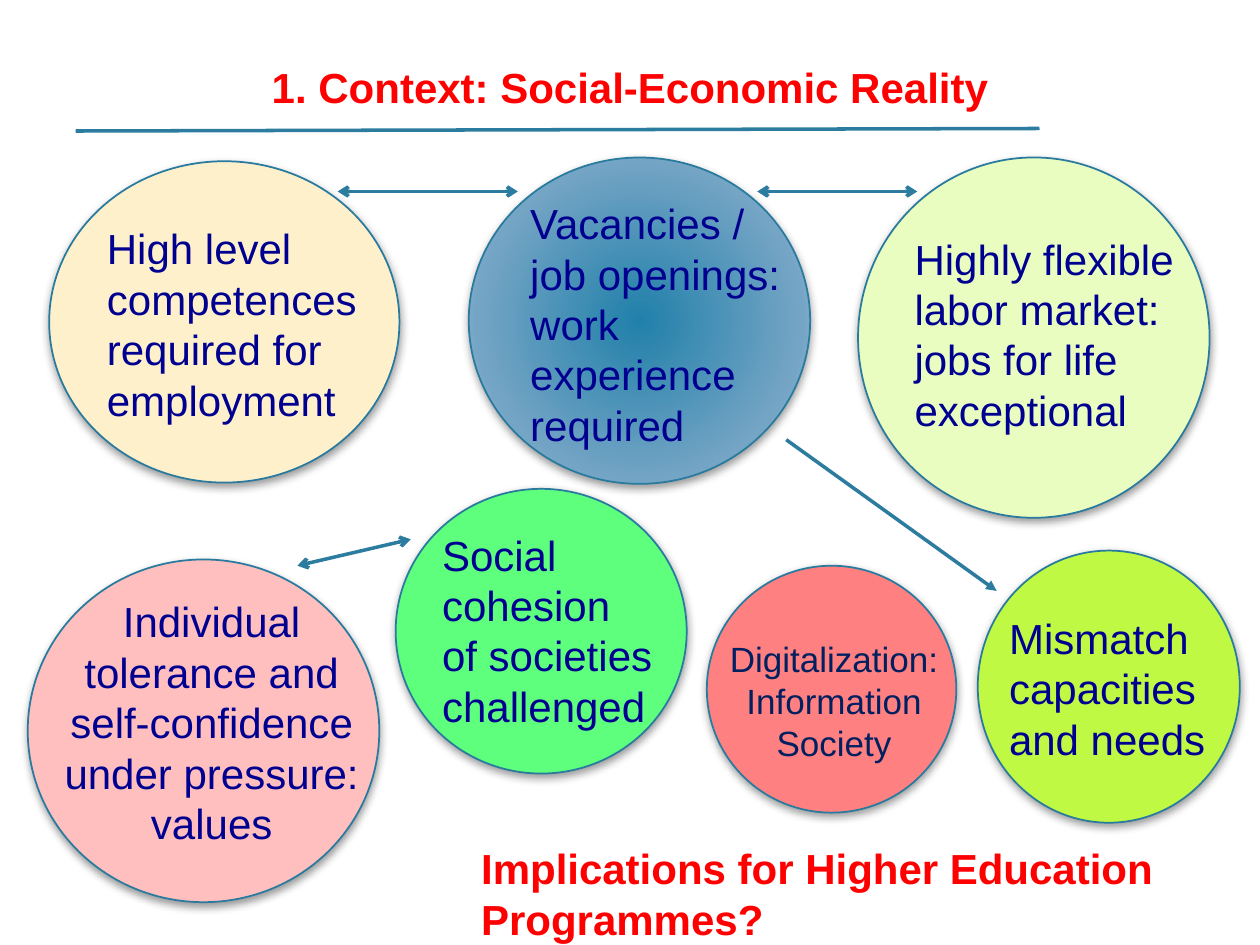
from dataclasses import dataclass

from lxml.etree import SubElement
from pptx import Presentation
from pptx.dml.color import RGBColor
from pptx.enum.shapes import MSO_CONNECTOR as Connector, MSO_SHAPE as Shape
from pptx.enum.text import MSO_ANCHOR as Anchor, MSO_AUTO_SIZE as AutoSize, PP_ALIGN as Align
from pptx.oxml.ns import qn
from pptx.slide import Slide
from pptx.text.text import TextFrame
from pptx.util import Inches, Pt

NAVY, DARK_BLUE, RED = "000090", "002060", "FF0000"
OUTLINE, ARROW = "287A9E", "2C7C9F"
RADIAL_STOPS = ((0, "2180AA"), (69, "75A5C5"), (100, "B8CCDC"))

Box = tuple[float, float, float, float]
Point = tuple[float, float]


@dataclass(frozen=True)
class Caption:
    box: Box
    text: str
    size: int = 24
    color: str = NAVY
    align: Align = Align.LEFT
    bold: bool = False


@dataclass(frozen=True)
class Bubble:
    box: Box
    fill: str | None
    caption: Caption


@dataclass(frozen=True)
class Link:
    start: Point
    end: Point
    head: str | None = None
    tail: str | None = None


BUBBLES = (
    Bubble((0.39, 1.28, 2.78, 2.55), "FFF0CC", Caption(
        (0.75, 1.72, 2.42, 1.72), "High level competences required for employment")),
    Bubble((3.72, 1.25, 2.71, 2.59), None, Caption(
        (4.11, 1.52, 2.31, 2.12), "Vacancies / job openings: work experience required")),
    Bubble((6.81, 1.25, 2.79, 2.86), "EAFDC1", Caption(
        (7.16, 1.8, 2.28, 1.72), "Highly flexible labor market: jobs for life exceptional")),
    Bubble((0.22, 4.44, 2.79, 2.72), "FFBFBF", Caption(
        (0.28, 4.68, 2.8, 2.42),
        "Individual tolerance and self-confidence under pressure:\nvalues", align=Align.CENTER)),
    Bubble((7.76, 4.37, 2.08, 2.16), "BFF944", Caption(
        (7.91, 4.81, 1.78, 1.31), "Mismatch capacities and needs")),
    Bubble((3.14, 3.88, 2.31, 2.26), "5DFF7D", Caption(
        (3.41, 4.15, 1.88, 1.72), "Social cohesion of societies challenged")),
    Bubble((5.61, 4.49, 1.98, 1.96), "FF8080", Caption(
        (5.65, 5.01, 1.94, 1.11), "Digitalization:\nInformation Society",
        20, DARK_BLUE, Align.CENTER)),
)
QUESTION = Caption((3.72, 6.64, 5.55, 0.91),
                   "Implications for Higher Education Programmes?", color=RED, bold=True)
HEADING = Caption((0.6, 0.12, 8.8, 0.82), "1. Context: Social-Economic Reality",
                  color=RED, align=Align.CENTER, bold=True)
LINKS = (
    Link((0.6, 1.04), (8.25, 1.02)),
    Link((2.68, 1.52), (4.11, 1.52), "arrow", "arrow"),
    Link((6.01, 1.52), (7.28, 1.52), "arrow", "arrow"),
    Link((2.36, 4.49), (3.26, 4.28), "arrow", "arrow"),
    Link((6.24, 3.49), (7.91, 4.69), tail="triangle"),
)


def rgb(color: str) -> RGBColor:
    """Turn a hex string into a colour."""
    return RGBColor.from_string(color)


def inches(values: tuple[float, ...]) -> list[Inches]:
    """Turn numbers into lengths."""
    return [Inches(value) for value in values]


def write_caption(frame: TextFrame, caption: Caption) -> None:
    """Fill a text frame and format its paragraphs."""
    frame.text = caption.text
    frame.word_wrap = True
    for paragraph in frame.paragraphs:
        paragraph.alignment = caption.align
        for run in paragraph.runs:
            run.font.name = "Arial"
            run.font.size = Pt(caption.size)
            run.font.bold = caption.bold
            run.font.color.rgb = rgb(caption.color)


def add_caption(slide: Slide, caption: Caption) -> None:
    """Add a text box that grows with its caption."""
    frame = slide.shapes.add_textbox(*inches(caption.box)).text_frame
    write_caption(frame, caption)
    frame.auto_size = AutoSize.SHAPE_TO_FIT_TEXT


def add_radial_fill(properties) -> None:
    """Give shape properties a circular gradient."""
    gradient = SubElement(properties, qn("a:gradFill"), rotWithShape="1")
    stops = SubElement(gradient, qn("a:gsLst"))
    for position, color in RADIAL_STOPS:
        stop = SubElement(stops, qn("a:gs"), pos=str(position * 1000))
        SubElement(stop, qn("a:srgbClr"), val=color)
    circle = SubElement(gradient, qn("a:path"), path="circle")
    SubElement(circle, qn("a:fillToRect"), dict.fromkeys("ltrb", "100000"))


def add_shadow(properties) -> None:
    """Add a soft shadow falling straight down."""
    effects = properties.find(qn("a:effectLst"))
    shadow = SubElement(effects, qn("a:outerShdw"), blurRad=str(Pt(5)), dist=str(Pt(2)),
                        dir="5400000", rotWithShape="0")
    color = SubElement(shadow, qn("a:srgbClr"), val="000000")
    SubElement(color, qn("a:alpha"), val="40000")


def add_bubble(slide: Slide, bubble: Bubble) -> None:
    """Draw an ellipse with its caption on top."""
    ellipse = slide.shapes.add_shape(Shape.OVAL, *inches(bubble.box))
    properties = ellipse._element.spPr
    if bubble.fill:
        ellipse.fill.solid()
        ellipse.fill.fore_color.rgb = rgb(bubble.fill)
    else:
        add_radial_fill(properties)
    ellipse.line.color.rgb = rgb(OUTLINE)
    ellipse.line.width = Pt(1)
    ellipse.shadow.inherit = False
    add_shadow(properties)
    add_caption(slide, bubble.caption)


def add_link(slide: Slide, link: Link) -> None:
    """Draw a line with optional arrowheads."""
    connector = slide.shapes.add_connector(
        Connector.STRAIGHT, *inches(link.start + link.end))
    connector.line.color.rgb = rgb(ARROW)
    connector.line.width = Pt(2)
    properties = connector._element.spPr
    outline = properties.find(qn("a:ln"))
    for tag, kind in (("a:headEnd", link.head), ("a:tailEnd", link.tail)):
        if kind:
            SubElement(outline, qn(tag), type=kind)
    SubElement(properties, qn("a:effectLst"))


def main() -> None:
    """Build the slide and save it."""
    deck = Presentation()
    deck.slide_width, deck.slide_height = Inches(10), Inches(7.5)
    slide = deck.slides.add_slide(deck.slide_layouts[5])
    heading = slide.shapes.title
    heading.left, heading.top, heading.width, heading.height = inches(HEADING.box)
    write_caption(heading.text_frame, HEADING)
    heading.text_frame.vertical_anchor = Anchor.BOTTOM
    for bubble in BUBBLES:
        add_bubble(slide, bubble)
    add_caption(slide, QUESTION)
    for link in LINKS:
        add_link(slide, link)
    deck.save("out.pptx")


if __name__ == "__main__":
    main()
